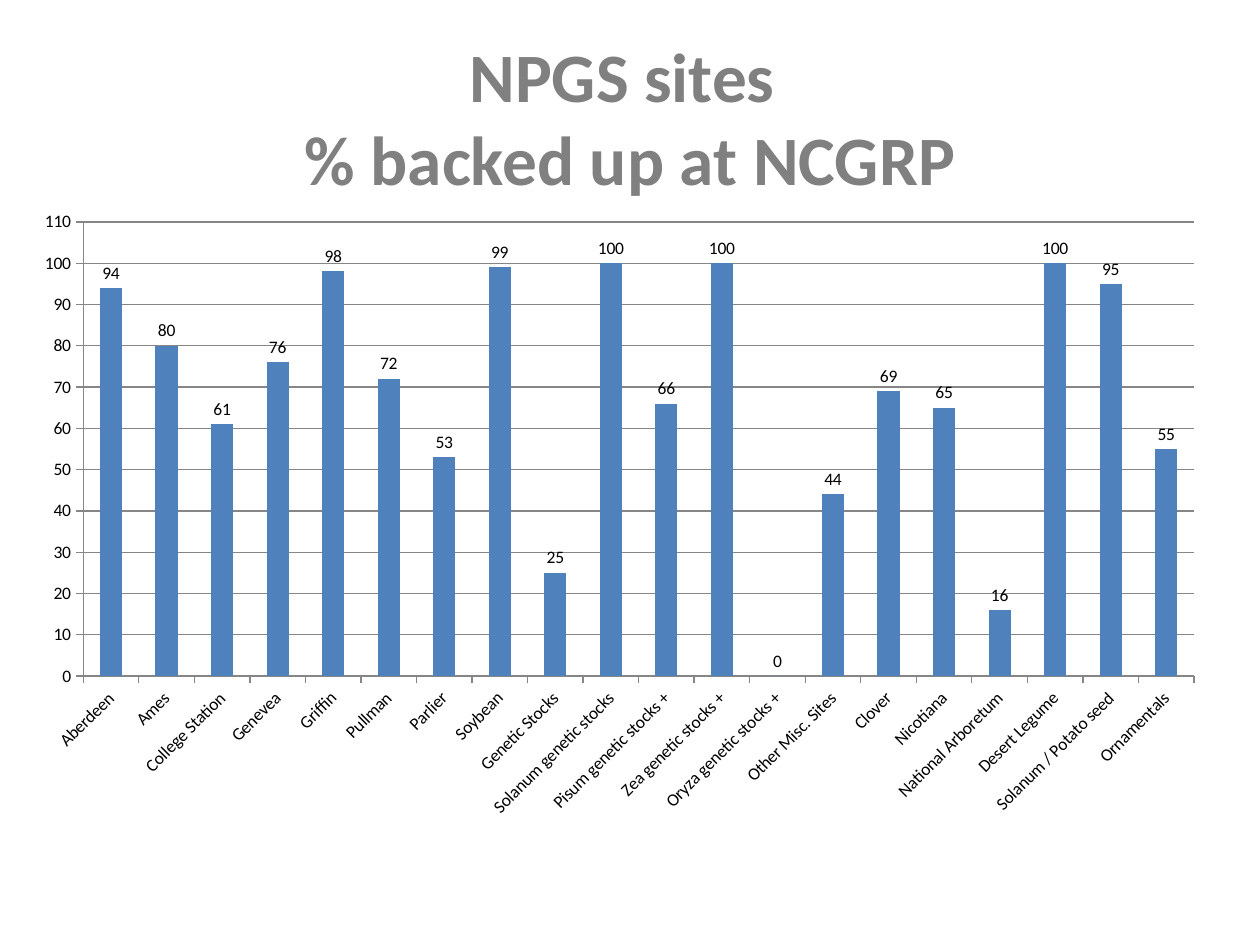
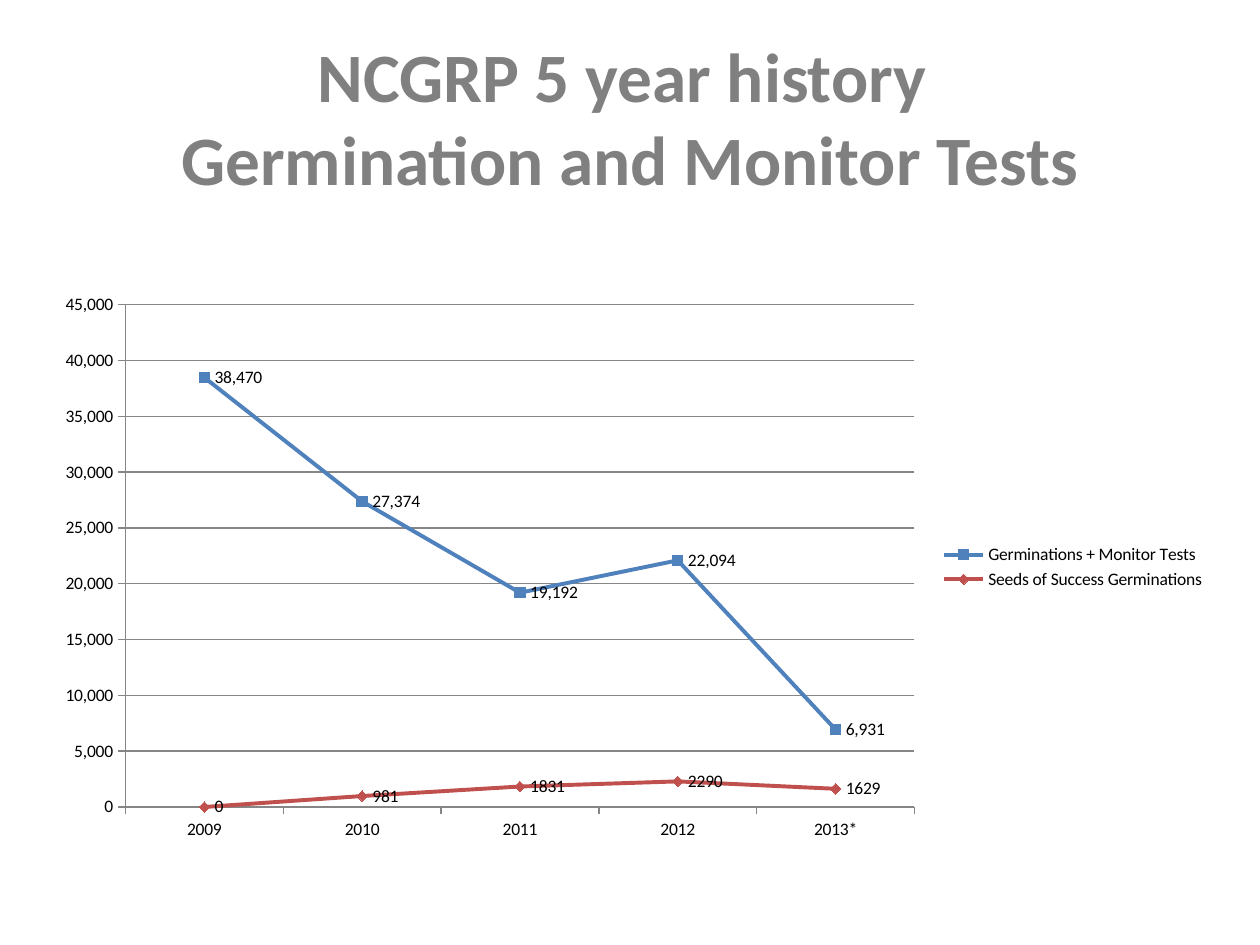
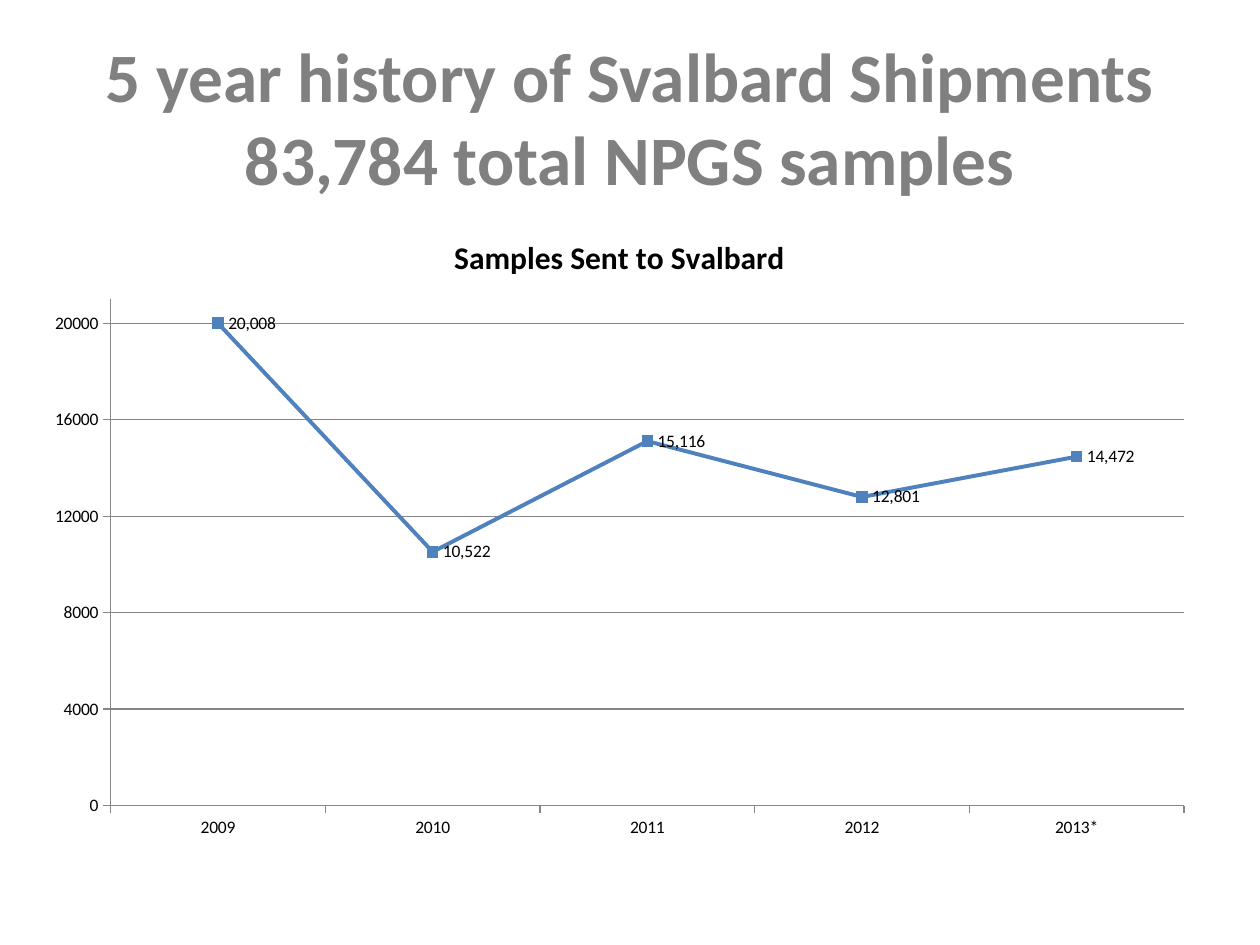
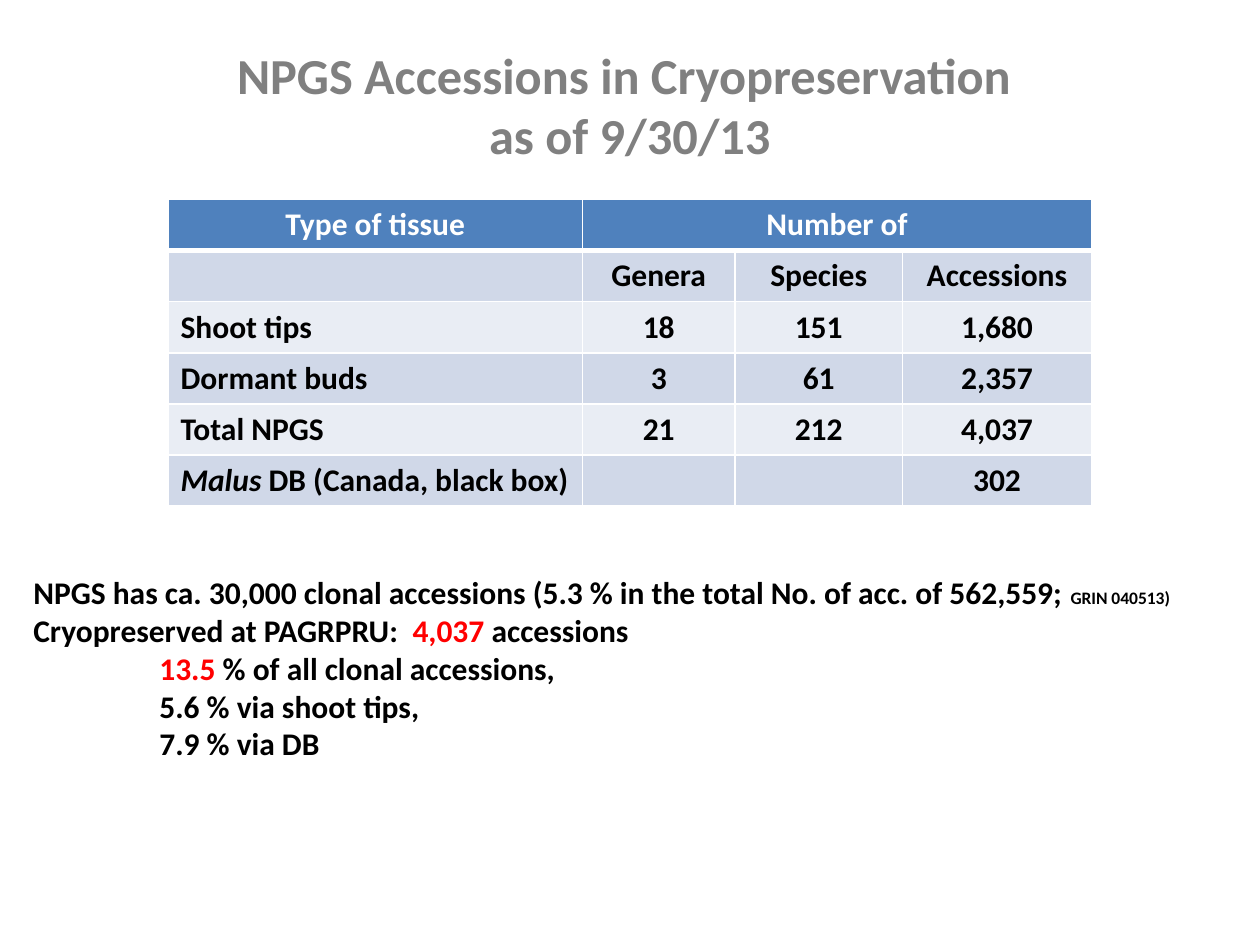
from lxml.etree import SubElement
from pptx import Presentation
from pptx.chart.data import CategoryChartData
from pptx.dml.color import RGBColor
from pptx.enum.chart import (XL_CHART_TYPE, XL_LABEL_POSITION, XL_LEGEND_POSITION,
                             XL_MARKER_STYLE, XL_TICK_MARK)
from pptx.enum.text import MSO_ANCHOR, MSO_AUTO_SIZE, PP_ALIGN
from pptx.oxml.ns import qn
from pptx.util import Inches, Pt

FONT = "Calibri"
GRAY = RGBColor(0x80, 0x80, 0x80)
RULE = RGBColor(0x86, 0x86, 0x86)
BLACK = RGBColor(0, 0, 0)
WHITE = RGBColor(0xFF, 0xFF, 0xFF)
RED = RGBColor(0xFF, 0, 0)
BLUE = RGBColor(0x4F, 0x81, 0xBD)
BRICK = RGBColor(0xC0, 0x50, 0x4D)
DARK = RGBColor(0xD0, 0xD8, 0xE8)
PALE = RGBColor(0xE9, 0xED, 0xF4)

WIDTH, HEIGHT = Inches(10), Inches(7.5)
COLS, ROWS = 60, 45
YEARS = ["2009", "2010", "2011", "2012", "2013*"]
SITES = {
    "Aberdeen": 94, "Ames": 80, "College Station": 61, "Genevea": 76,
    "Griffin": 98, "Pullman": 72, "Parlier": 53, "Soybean": 99,
    "Genetic Stocks": 25, "Solanum genetic stocks": 100,
    "Pisum genetic stocks +": 66, "Zea genetic stocks +": 100,
    "Oryza genetic stocks +": 0, "Other Misc. Sites": 44, "Clover": 69,
    "Nicotiana": 65, "National Arboretum": 16, "Desert Legume": 100,
    "Solanum / Potato seed": 95, "Ornamentals": 55,
}
TISSUE = [
    ["Type of tissue", "Number of", "", ""],
    ["", "Genera", "Species", "Accessions"],
    ["Shoot tips", "18", "151", "1,680"],
    ["Dormant buds", "3", "61", "2,357"],
    ["Total NPGS", "21", "212", "4,037"],
    ["Malus DB (Canada, black box)", "", "", "302"],
]


def grid(col, row, wide, high):
    """Turn grid columns and rows into left, top, width, height."""
    return (int(WIDTH * col / COLS), int(HEIGHT * row / ROWS),
            int(WIDTH * wide / COLS), int(HEIGHT * high / ROWS))


def style(font, size, color=BLACK, bold=False):
    """Set the common traits of a font."""
    font.name, font.size, font.bold = FONT, Pt(size), bold
    font.color.rgb = color


def write(para, text, size=18, color=BLACK, italic=False):
    """Add one bold run."""
    run = para.add_run()
    run.text = text
    style(run.font, size, color, True)
    if italic:
        run.font.italic = True


def start(deck, lines, size=39.6, anchor=MSO_ANCHOR.MIDDLE):
    """Add a slide with a centred title of several lines."""
    slide = deck.slides.add_slide(deck.slide_layouts[5])
    title = slide.shapes.title
    title.left, title.top, title.width, title.height = grid(3, 1.8, 54, 7.5)
    frame = title.text_frame
    frame.auto_size, frame.vertical_anchor = MSO_AUTO_SIZE.NONE, anchor
    para = frame.paragraphs[0]
    para.alignment = PP_ALIGN.CENTER
    for num, line in enumerate(lines):
        if num:
            para.add_line_break()
        write(para, line, size, GRAY)
    return slide


def rule(line):
    """Draw an axis or grid line."""
    line.color.rgb, line.width = RULE, Pt(0.75)


def plot(slide, kind, place, cats, series, top, step, form="General"):
    """Add a chart with a scaled value axis and labelled series."""
    data = CategoryChartData()
    data.categories = cats
    for name, vals, code in series:
        data.add_series(name, vals, number_format=code)
    chart = slide.shapes.add_chart(kind, *grid(*place), data).chart
    style(chart.font, 10)
    chart.has_title = chart.has_legend = False
    axis = chart.value_axis
    axis.minimum_scale, axis.maximum_scale, axis.major_unit = 0, top, step
    axis.tick_labels.number_format = form
    axis.tick_labels.number_format_is_linked = False
    axis.has_major_gridlines = True
    rule(axis.major_gridlines.format.line)
    for side in (axis, chart.category_axis):
        side.major_tick_mark = XL_TICK_MARK.OUTSIDE
        side.minor_tick_mark = XL_TICK_MARK.NONE
        rule(side.format.line)
    chart.plots[0].vary_by_categories = False
    for item, (_, _, code) in zip(chart.plots[0].series, series):
        tags = item.data_labels
        tags.show_value = True
        tags.number_format, tags.number_format_is_linked = code, False
        style(tags.font, 10)
    return chart


def bars(slide, place, cats, series, top, step):
    """Add a column chart."""
    chart = plot(slide, XL_CHART_TYPE.COLUMN_CLUSTERED, place, cats, series, top, step)
    chart.plots[0].gap_width = 150
    item = chart.plots[0].series[0]
    item.format.fill.solid()
    item.format.fill.fore_color.rgb = BLUE
    item.data_labels.position = XL_LABEL_POSITION.OUTSIDE_END


def lines(slide, place, series, top, step, form="General"):
    """Add a line chart over the five years."""
    chart = plot(slide, XL_CHART_TYPE.LINE_MARKERS, place, YEARS, series, top, step, form)
    looks = [(BLUE, XL_MARKER_STYLE.SQUARE), (BRICK, XL_MARKER_STYLE.DIAMOND)]
    for item, (color, mark) in zip(chart.plots[0].series, looks):
        item.smooth = False
        item.format.line.color.rgb, item.format.line.width = color, Pt(2.25)
        item.marker.style, item.marker.size = mark, 6
        item.marker.format.fill.solid()
        item.marker.format.fill.fore_color.rgb = color
        item.marker.format.line.color.rgb = color
        item.data_labels.position = XL_LABEL_POSITION.RIGHT
    return chart


def edge(cell, row):
    """Give a cell white borders, thick below the header."""
    props = cell._tc.get_or_add_tcPr()
    for side in "LRTB":
        thick = (row, side) in ((0, "B"), (1, "T"))
        line = SubElement(props, qn("a:ln" + side), w=str(Pt(3 if thick else 1)))
        fill = SubElement(line, qn("a:solidFill"))
        SubElement(fill, qn("a:srgbClr"), val=str(WHITE))


def table(slide, place, rows, wides):
    """Add a banded table with a header that spans the number columns."""
    grid_table = slide.shapes.add_table(len(rows), len(wides), *grid(*place)).table
    for col, wide in zip(grid_table.columns, wides):
        col.width = Inches(wide)
    for row, texts in enumerate(rows):
        for col, text in enumerate(texts):
            cell = grid_table.cell(row, col)
            edge(cell, row)
            cell.fill.solid()
            cell.fill.fore_color.rgb = BLUE if row == 0 else DARK if row % 2 else PALE
            para = cell.text_frame.paragraphs[0]
            if row == 0 or col:
                para.alignment = PP_ALIGN.CENTER
            color = BLACK if row else WHITE
            if text.startswith("Malus"):
                write(para, "Malus", color=color, italic=True)
                text = text.removeprefix("Malus")
            if text:
                write(para, text, color=color)
    grid_table.cell(0, 1).merge(grid_table.cell(0, 3))


def notes(slide, place, paras):
    """Add a text box; each paragraph is an indent and its runs."""
    frame = slide.shapes.add_textbox(*grid(*place)).text_frame
    frame.word_wrap = True
    for num, (indent, runs) in enumerate(paras):
        para = frame.add_paragraph() if num else frame.paragraphs[0]
        para._p.get_or_add_pPr().set("marL", str(Inches(indent)))
        for run in runs:
            write(para, *run)


def main():
    """Build the deck."""
    deck = Presentation()
    deck.slide_width, deck.slide_height = WIDTH, HEIGHT

    slide = start(deck, ["NPGS sites ", "% backed up at NCGRP"])
    bars(slide, (1, 9.5, 57, 30), list(SITES),
         [("Series 1", list(SITES.values()), "General")], 110, 10)

    slide = start(deck, ["NCGRP 5 year history ", "Germination and Monitor Tests"])
    tests = [
        ("Germinations + Monitor Tests", [38470, 27374, 19192, 22094, 6931], "#,##0"),
        ("Seeds of Success Germinations", [0, 981, 1831, 2290, 1629], "General"),
    ]
    chart = lines(slide, (2, 13.5, 56, 27), tests, 45000, 5000, "#,##0")
    chart.has_legend = True
    chart.legend.position = XL_LEGEND_POSITION.RIGHT
    chart.legend.include_in_layout = False
    style(chart.legend.font, 10)

    slide = start(deck, ["5 year history of Svalbard Shipments", "83,784 total NPGS samples"])
    name = "Samples Sent to Svalbard"
    sent = [(name, [20008, 10522, 15116, 12801, 14472], "#,##0")]
    chart = lines(slide, (1.5, 10, 56, 30.5), sent, 21000, 4000)
    chart.has_title = True
    write(chart.chart_title.text_frame.paragraphs[0], name)
    chart.chart_title.include_in_layout = False

    slide = start(deck, ["NPGS Accessions in Cryopreservation ", "as of 9/30/13"],
                  28.8, MSO_ANCHOR.TOP)
    table(slide, (8, 9.5, 44, 14.58), TISSUE, [3.29, 1.21, 1.33, 1.5])
    notes(slide, (1, 27, 57, 14.5), [
        (0, [("NPGS has ca. 30,000 clonal accessions (5.3 % in the total No. of acc. "
              "of 562,559; ",), ("GRIN 040513)", 10)]),
        (0, [("Cryopreserved at PAGRPRU:  ",), ("4,037", 18, RED), (" accessions",)]),
        (1, [("13.5", 18, RED), (" % of all clonal accessions,",)]),
        (1, [("5.6 % via shoot tips,",)]),
        (1, [("7.9 % via DB",)]),
    ])
    deck.save("out.pptx")


main()
